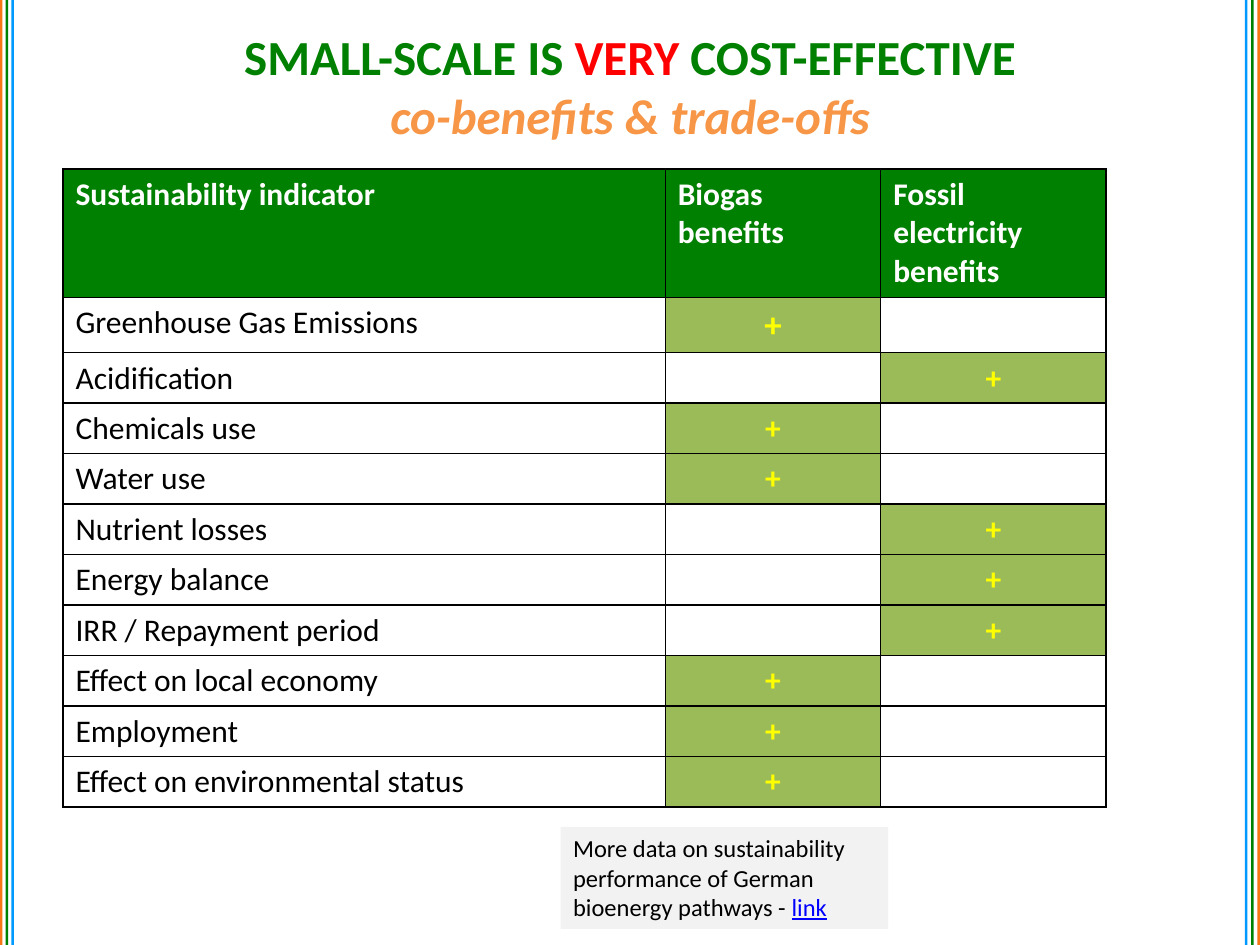
import dataclasses
import typing

import pptx
import pptx.dml.color
import pptx.enum.shapes
import pptx.enum.text
import pptx.oxml
import pptx.util

WIDTH = pptx.util.Inches(10)
HEIGHT = pptx.util.Inches(7.5)
COLOURS = {
    "orange": "F67616", "green": "008000", "blue": "0099FF", "red": "FF0000",
    "peach": "F79646", "white": "FFFFFF", "black": "000000", "yellow": "FFFF00",
    "olive": "9BBB59", "grey": "F2F2F2", "link": "0000FF",
}
ALIGN = pptx.enum.text.PP_ALIGN
ANCHOR = pptx.enum.text.MSO_ANCHOR


@dataclasses.dataclass
class Area:
    left: float
    top: float
    width: float
    height: float

    def lengths(self) -> tuple[int, ...]:
        return (round(self.left * WIDTH), round(self.top * HEIGHT),
                round(self.width * WIDTH), round(self.height * HEIGHT))


@dataclasses.dataclass
class Span:
    text: str
    size: int
    colour: str
    format: dict[str, bool] = dataclasses.field(default_factory=dict)


@dataclasses.dataclass
class StripeSet:
    start: float
    step: float


@dataclasses.dataclass
class Indicator:
    name: str
    winner: int
    size: int = 18


BIOGAS, FOSSIL = 1, 2
STRIPE_SETS = [StripeSet(0, 0.0045), StripeSet(0.998, -0.005)]
STRIPE_COLOURS = ["orange", "green", "blue"]
HEADINGS = ["Sustainability indicator", "Biogas benefits", "Fossil electricity benefits"]
INDICATORS = [
    Indicator("Greenhouse Gas Emissions", BIOGAS, 20),
    Indicator("Acidification", FOSSIL),
    Indicator("Chemicals use", BIOGAS),
    Indicator("Water use", BIOGAS),
    Indicator("Nutrient losses", FOSSIL),
    Indicator("Energy balance", FOSSIL),
    Indicator("IRR / Repayment period", FOSSIL),
    Indicator("Effect on local economy", BIOGAS),
    Indicator("Employment", BIOGAS),
    Indicator("Effect on environmental status", BIOGAS),
]
COLUMN_WIDTHS = [4.78, 1.71, 1.79]
ROW_HEIGHTS = [1.02, 0.44] + [0.4] * 9


def rgb(colour: str) -> pptx.dml.color.RGBColor:
    return pptx.dml.color.RGBColor.from_string(COLOURS[colour])


def paint(item: typing.Any, colour: str) -> None:
    item.fill.solid()
    item.fill.fore_color.rgb = rgb(colour)


def write(para: typing.Any, spans: list[Span]) -> None:
    for span in spans:
        run = para.add_run()
        run.text = span.text
        values = {"name": "Calibri", "size": pptx.util.Pt(span.size), **span.format}
        for key, value in values.items():
            setattr(run.font, key, value)
        run.font.color.rgb = rgb(span.colour)


def add_stripes(page: typing.Any, stripes: StripeSet) -> None:
    for index, colour in enumerate(STRIPE_COLOURS):
        area = Area(stripes.start + index * stripes.step, 0, 0.002, 1)
        stripe = page.shapes.add_shape(
            pptx.enum.shapes.MSO_SHAPE.RECTANGLE, *area.lengths())
        stripe.shadow.inherit = False
        paint(stripe, colour)
        stripe.line.fill.background()


def add_box(page: typing.Any, area: Area, format: dict[str, typing.Any]) -> typing.Any:
    box = page.shapes.add_textbox(*area.lengths())
    for key, value in format.items():
        setattr(box.text_frame, key, value)
    return box


def add_title(page: typing.Any) -> None:
    box = add_box(page, Area(0.05, 0.007, 0.9, 0.167),
                  {"word_wrap": True, "vertical_anchor": ANCHOR.MIDDLE})
    para = box.text_frame.paragraphs[0]
    para.alignment = ALIGN.CENTER
    bold = {"bold": True}
    write(para, [
        Span("SMALL-SCALE IS ", 28, "green", bold),
        Span("VERY", 28, "red", bold),
        Span(" COST-EFFECTIVE", 28, "green", bold),
    ])
    para.add_line_break()
    write(para, [Span("co-benefits & trade-offs", 28, "peach",
                      {"bold": True, "italic": True})])


def add_borders(cell: typing.Any) -> None:
    properties = cell._tc.get_or_add_tcPr()
    for index, side in enumerate(("lnL", "lnR", "lnT", "lnB")):
        properties.insert(index, pptx.oxml.parse_xml(
            f'<a:{side} xmlns:a="http://schemas.openxmlformats.org/drawingml/2006/main" '
            f'w="12700"><a:solidFill><a:srgbClr val="{COLOURS["black"]}"/>'
            f'</a:solidFill></a:{side}>'))


def fill_cell(cell: typing.Any, span: typing.Optional[Span],
              colour: typing.Optional[str], align: typing.Any = None) -> None:
    para = cell.text_frame.paragraphs[0]
    if span:
        para.alignment = align
        write(para, [span])
    else:
        para.font.size = pptx.util.Pt(18)
    if colour:
        paint(cell, colour)
    else:
        cell.fill.background()
    add_borders(cell)


def add_indicator_table(page: typing.Any) -> None:
    area = Area(0.05, 1.34 / 7.5, sum(COLUMN_WIDTHS) / 10, sum(ROW_HEIGHTS) / 7.5)
    table = page.shapes.add_table(
        len(ROW_HEIGHTS), len(COLUMN_WIDTHS), *area.lengths()).table
    for column, width in zip(table.columns, COLUMN_WIDTHS):
        column.width = pptx.util.Inches(width)
    for row, height in zip(table.rows, ROW_HEIGHTS):
        row.height = pptx.util.Inches(height)
    for column, heading in enumerate(HEADINGS):
        fill_cell(table.cell(0, column),
                  Span(heading, 18, "white", {"bold": True}), "green")
    for row, indicator in enumerate(INDICATORS, start=1):
        fill_cell(table.cell(row, 0),
                  Span(indicator.name, 18, "black", {"bold": False}), None)
        for column in (BIOGAS, FOSSIL):
            if column == indicator.winner:
                plus = Span("+", indicator.size, "yellow", {"bold": True})
                fill_cell(table.cell(row, column), plus, "olive", ALIGN.CENTER)
            else:
                fill_cell(table.cell(row, column), None, None)


def add_source_note(page: typing.Any) -> None:
    box = add_box(page, Area(0.445, 0.875, 0.26, 0.108), {
        "word_wrap": True, "auto_size": pptx.enum.text.MSO_AUTO_SIZE.SHAPE_TO_FIT_TEXT})
    paint(box, "grey")
    write(box.text_frame.paragraphs[0], [
        Span("More data on sustainability performance of German bioenergy pathways - ",
             14, "black"),
        Span("link", 14, "link", {"underline": True}),
    ])


def main() -> None:
    deck = pptx.Presentation()
    deck.slide_width, deck.slide_height = WIDTH, HEIGHT
    page = deck.slides.add_slide(deck.slide_layouts[6])
    for stripes in STRIPE_SETS:
        add_stripes(page, stripes)
    add_title(page)
    add_indicator_table(page)
    add_source_note(page)
    deck.save("out.pptx")


if __name__ == "__main__":
    main()
